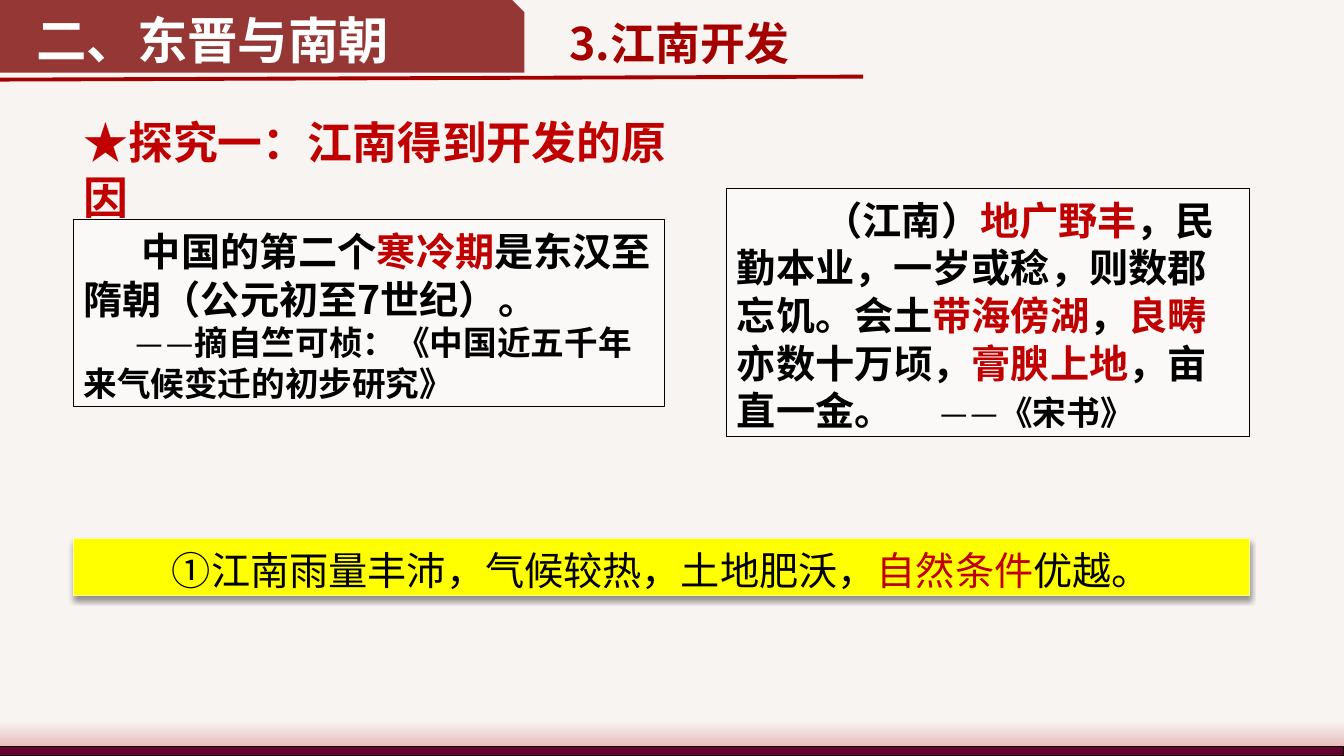
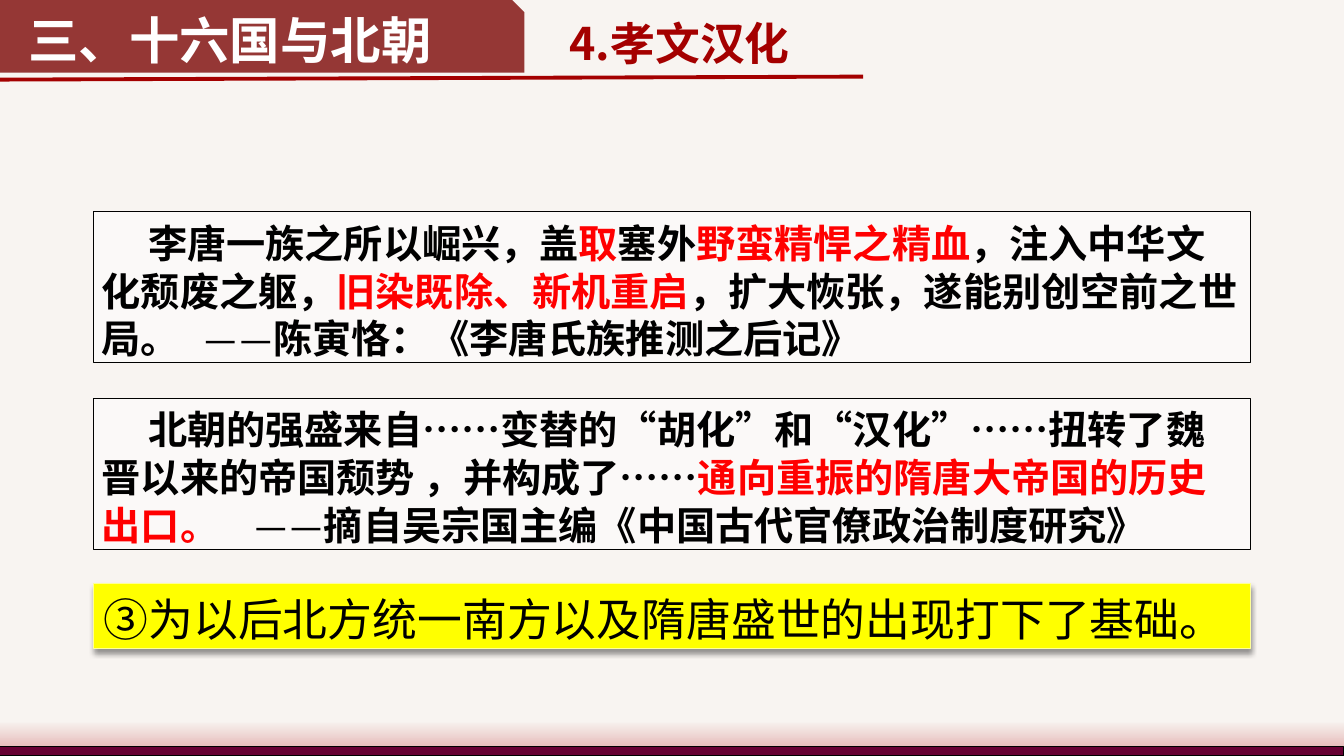
from dataclasses import dataclass

from lxml import etree
from pptx import Presentation
from pptx.dml.color import RGBColor
from pptx.enum.shapes import MSO_CONNECTOR, MSO_SHAPE
from pptx.enum.text import MSO_ANCHOR, MSO_AUTO_SIZE, PP_ALIGN
from pptx.oxml.ns import qn
from pptx.util import Inches, Pt


@dataclass(frozen=True)
class Theme:
    font: str = "Noto Sans CJK SC"
    dash_font: str = "Calibri"
    paper: str = "F8F4F1"
    band: str = "953735"
    accent: str = "A40000"
    fade: str = "E6BDBB"
    foot: str = "660033"
    ink: str = "000000"
    white: str = "FFFFFF"
    crimson: str = "C00000"
    red: str = "FF0000"
    yellow: str = "FFFF00"
    pale: str = "FFFF99"
    title: int = 36
    heading: int = 32
    body: int = 28
    source: int = 24
    leading: float = 1.21


T = Theme()
DASH = "——"

# Content: a paragraph holds runs of (text, colour[, size]); at is left, top, width, height
SLIDES = [
    {
        "title": "二、东晋与南朝", "title_left": 0.36, "topic": "3.江南开发",
        "question": {"at": (0.73, 1.06, 6.34, 1.18), "text": "★探究一：江南得到开发的原因"},
        "cards": [
            {"at": (0.73, 2.18, 5.86, 1.85), "inset": 0.1, "alpha": 54, "paragraphs": [
                {"indent": 0.58, "runs": [
                    ("中国的第二个", T.ink), ("寒冷期", T.crimson),
                    ("是东汉至隋朝（公元初至7世纪）。", T.ink)]},
                {"indent": 0.5, "size": T.source, "runs": [
                    (DASH, T.ink), ("摘自竺可桢：《中国近五千年来气候变迁的初步研究》", T.ink)]},
            ]},
            {"at": (7.21, 1.87, 5.18, 2.46), "inset": 0.1, "alpha": 54, "paragraphs": [
                {"indent": 0.86, "tab": 2.01, "runs": [
                    ("（江南）", T.ink), ("地广野丰", T.crimson),
                    ("，民勤本业，一岁或稔，则数郡忘饥。会土", T.ink),
                    ("带海傍湖", T.crimson), ("，", T.ink), ("良畴", T.crimson),
                    ("亦数十万顷，", T.ink), ("膏腴上地", T.crimson),
                    ("，亩直一金。\t", T.ink),
                    (DASH, T.ink, T.source), ("《宋书》", T.ink, T.source)]},
            ]},
        ],
        "answer": {"at": (0.73, 5.34, 11.66, 0.57), "size": T.body, "align": PP_ALIGN.CENTER,
                   "runs": [("①江南雨量丰沛，气候较热，土地肥沃，", T.ink),
                            ("自然条件", T.crimson), ("优越。", T.ink)]},
    },
    {
        "title": "三、十六国与北朝", "title_left": 0.28, "topic": "4.孝文汉化",
        "cards": [
            {"at": (0.93, 2.1, 11.47, 1.5), "inset": 0.08, "alpha": 51, "paragraphs": [
                {"indent": 0.46, "tab": 2.29, "runs": [
                    ("李唐一族之所以崛兴，盖", T.ink), ("取", T.red), ("塞外", T.ink),
                    ("野蛮精悍之精血", T.red), ("，注入中华文化颓废之躯，", T.ink),
                    ("旧染既除、新机重启", T.red),
                    ("，扩大恢张，遂能别创空前之世局。\t", T.ink),
                    (DASH, T.ink), ("陈寅恪：《李唐氏族推测之后记》", T.ink)]},
            ]},
            {"at": (0.93, 3.95, 11.47, 1.5), "inset": 0.08, "alpha": 51, "paragraphs": [
                {"indent": 0.46, "tab": 1.71, "runs": [
                    ("北朝的强盛来自……变替的“胡化”和“汉化”……扭转了魏晋以来的帝国颓势 ，并构成了……", T.ink),
                    ("通向重振的隋唐大帝国的历史出口。\t", T.red),
                    (DASH, T.ink), ("摘自吴宗国主编《中国古代官僚政治制度研究》", T.ink)]},
            ]},
        ],
        "answer": {"at": (0.93, 5.79, 11.47, 0.64), "size": T.heading, "align": PP_ALIGN.LEFT,
                   "runs": [("③为以后北方统一南方以及隋唐盛世的出现打下了基础。", T.ink)]},
    },
]


def rgb(value):
    return RGBColor.from_string(value)


def box(at):
    return [Inches(v) for v in at]


def sub(parent, tag, **attrs):
    return etree.SubElement(parent, qn(tag), {k: str(v) for k, v in attrs.items()})


def setup(tf, inset=0.1, top=0.05, anchor=MSO_ANCHOR.TOP):
    tf.word_wrap = True
    tf.auto_size = MSO_AUTO_SIZE.NONE
    tf.vertical_anchor = anchor
    tf.margin_left = tf.margin_right = Inches(inset)
    tf.margin_top = Inches(top)
    tf.margin_bottom = Inches(0)


def write(p, runs, size, bold=True, align=PP_ALIGN.LEFT, indent=0, tab=None):
    pPr = p._p.get_or_add_pPr()
    pPr.set("marL", "0")
    pPr.set("indent", str(Inches(indent)))
    if tab:
        sub(sub(pPr, "a:tabLst"), "a:tab", pos=Inches(tab), algn="l")
    p.alignment = align
    p.line_spacing = Pt(round(size * T.leading))
    for text, color, *own_size in runs:
        r = p.add_run()
        r.text = text
        dash = text == DASH
        r.font.size = Pt(own_size[0] if own_size else size)
        r.font.bold = bold and not dash
        r.font.color.rgb = rgb(color)
        r.font.name = T.dash_font if dash else T.font
        rPr = r._r.get_or_add_rPr()
        rPr.set("lang", "zh-CN")
        sub(rPr, "a:ea", typeface=r.font.name)


def add_block(s, at, fill=None, line=None, kind=MSO_SHAPE.RECTANGLE):
    sp = s.shapes.add_shape(kind, *box(at))
    sp.shadow.inherit = False
    if fill:
        sp.fill.solid()
        sp.fill.fore_color.rgb = rgb(fill)
    if line:
        sp.line.color.rgb = rgb(line)
        sp.line.width = Pt(0.75)
    else:
        sp.line.fill.background()
    return sp


def add_label(s, at, text, color):
    tf = s.shapes.add_textbox(*box(at)).text_frame
    setup(tf, top=0.07)
    write(tf.paragraphs[0], [(text, color)], T.heading)


def add_frame(s, title, title_left, topic):
    # Foot: soft fade above a dark strip
    fade = add_block(s, (0, 7.15, 13.33, 0.26))
    fade.fill.gradient()
    fade.fill.gradient_angle = 270
    for stop, color in zip(fade.fill.gradient_stops, (T.paper, T.fade)):
        stop.color.rgb = rgb(color)
    add_block(s, (0, 7.41, 13.33, 0.09), T.foot, T.ink)

    # Head: band, rule, title and topic
    band_at = (0, 0, 5.2, 0.72)
    add_block(s, band_at, T.band, kind=MSO_SHAPE.SNIP_1_RECTANGLE)
    rule = s.shapes.add_connector(MSO_CONNECTOR.STRAIGHT, *box((0, 0.79, 8.56, 0.76)))
    rule.line.color.rgb = rgb(T.accent)
    rule.line.width = Pt(2.75)
    sub(rule._element.spPr, "a:effectLst")

    sp = s.shapes.title
    sp.left, sp.top, sp.width, sp.height = box(band_at)
    s.shapes._spTree.append(sp._element)
    setup(sp.text_frame, inset=title_left, anchor=MSO_ANCHOR.MIDDLE)
    write(sp.text_frame.paragraphs[0], [(title, T.white)], T.title)
    add_label(s, (5.55, 0.08, 2.52, 0.64), topic, T.accent)


def add_card(s, at, inset, alpha, paragraphs):
    sp = add_block(s, at, T.white, T.ink)
    color = sp._element.spPr.find(qn("a:solidFill"))[0]
    sub(color, "a:alpha", val=alpha * 1000)
    tf = sp.text_frame
    setup(tf, inset, top=0.07)
    for i, item in enumerate(paragraphs):
        p = tf.add_paragraph() if i else tf.paragraphs[0]
        write(p, **{"size": T.body, **item})


def add_answer(s, at, runs, size, align):
    sp = add_block(s, at, T.yellow, T.pale)
    effects = sp._element.spPr.find(qn("a:effectLst"))
    shadow = sub(effects, "a:outerShdw", blurRad=Pt(4), dist=Pt(3), dir=90 * 60000,
                 algn="t", rotWithShape=0)
    sub(sub(shadow, "a:srgbClr", val=T.ink), "a:alpha", val=40000)
    setup(sp.text_frame, top=0.07)
    write(sp.text_frame.paragraphs[0], runs, size, bold=False, align=align)


def main():
    prs = Presentation()
    prs.slide_width, prs.slide_height = Inches(13.33), Inches(7.5)
    background = prs.slide_master.background.fill
    background.solid()
    background.fore_color.rgb = rgb(T.paper)

    for content in SLIDES:
        s = prs.slides.add_slide(prs.slide_layouts[5])
        add_frame(s, content["title"], content["title_left"], content["topic"])
        if "question" in content:
            add_label(s, **content["question"], color=T.crimson)
        for card in content["cards"]:
            add_card(s, **card)
        add_answer(s, **content["answer"])
    prs.save("out.pptx")


if __name__ == "__main__":
    main()
